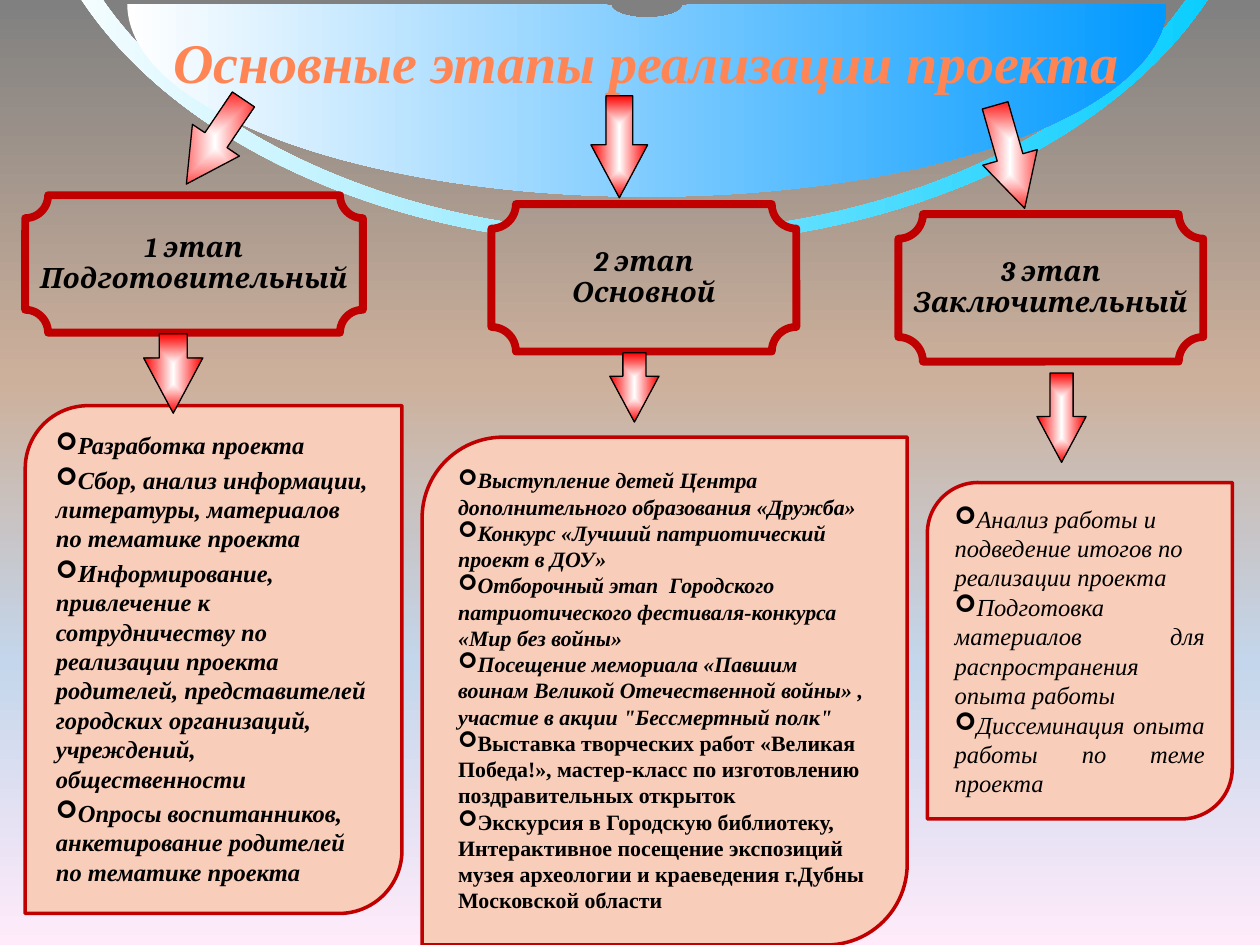
import pptx
import pptx.util
import pptx.oxml
import pptx.oxml.ns
import pptx.dml.color
import pptx.enum.shapes
import pptx.enum.text

Inches, Pt = pptx.util.Inches, pptx.util.Pt
KIND = pptx.enum.shapes.MSO_SHAPE
ALIGN = pptx.enum.text.PP_ALIGN
ANCHOR = pptx.enum.text.MSO_ANCHOR
HUE = {"title": "FF8654", "space": "0000CC", "text": "000000",
       "edge": "C00000", "card": "F8CDBA"}
SERIF = "Times New Roman"
WIDTH, HEIGHT = 10, 7.5
NS = pptx.oxml.ns.nsdecls("a")

# Content
TITLE = "Основные этапы реализации проекта"
BACK = [(0, "808080"), (40, "CDB09B"), (70, "C4D6EB"), (100, "FFEBFA")]
ARROW = [(0, "FFFFFF"), (100, "FF0000")]
# box, outer and inner half ellipse (cx, cy, rx, ry), end colour
RINGS = [
    ((0.23, -4.7, 9.77, 6.66), (5.115, -1.32, 4.885, 3.27),
     (5.115, -1.33, 4.735, 3.18), "00CCFF"),
    ((1.01, -1.48, 8.25, 3.05), (5.135, 0.03, 4.125, 1.53),
     (5.135, 0.04, 0.285, 0.1), "0099FF"),
]
STAGES = [
    ((0.2, 1.55, 2.68, 1.09), ["1 этап", "Подготовительный"]),
    ((7.13, 1.7, 2.42, 1.17), ["3 этап", "Заключительный"]),
    ((3.9, 1.62, 2.42, 1.17), ["2 этап", "Основной"]),
]
# place, size, bold, space before, items (text, italic, justified)
CARDS = [
    ((0.2, 3.22, 2.99, 4.03), 14, True, 2.8, [
        ("Разработка проекта", True, False),
        ("Сбор, анализ информации, литературы, материалов по тематике проекта",
         True, False),
        ("Информирование, привлечение к сотрудничеству по реализации проекта "
         "родителей, представителей городских организаций, учреждений, "
         "общественности", True, False),
        ("Опросы воспитанников, анкетирование родителей по тематике проекта",
         True, False),
    ]),
    ((7.36, 3.83, 2.42, 2.67), 14, False, 0, [
        ("Анализ работы и подведение итогов по реализации проекта", True, False),
        ("Подготовка материалов для распространения опыта работы", True, True),
        ("Диссеминация опыта работы по теме проекта", True, True),
    ]),
    ((3.35, 3.47, 3.85, 4.03), 12.5, True, 0, [
        ("Выступление детей Центра дополнительного образования «Дружба»",
         True, False),
        ("Конкурс «Лучший патриотический проект в ДОУ»", True, False),
        ("Отборочный этап  Городского патриотического фестиваля-конкурса "
         "«Мир без войны»", True, False),
        ("Посещение мемориала «Павшим воинам Великой Отечественной войны» , "
         "участие в акции \"Бессмертный полк\"", True, False),
        ("Выставка творческих работ «Великая Победа!», мастер-класс по "
         "изготовлению поздравительных открыток", False, False),
        ("Экскурсия в Городскую библиотеку, Интерактивное посещение экспозиций "
         "музея археологии и краеведения г.Дубны Московской области",
         False, False),
    ]),
]
ARROWS = [  # place, turn
    ((1.3, 0.9, 0.81, 0.45), 124),
    ((7.59, 1.02, 0.85, 0.45), 74),
    ((4.51, 0.94, 0.81, 0.45), 90),
    ((1.06, 2.73, 0.63, 0.47), 90),
    ((4.76, 2.88, 0.55, 0.39), 90),
    ((8.07, 3.12, 0.71, 0.39), 90),
]


def color(name):
    return pptx.dml.color.RGBColor.from_string(HUE[name])


def blend(fill, root, stops, angle=None):
    """Gradient along an angle, or out from the centre when there is none."""
    fill.gradient()
    old = root.xpath(".//a:gradFill")[0]
    marks = "".join(f'<a:gs pos="{pos * 1000}"><a:srgbClr val="{hue}"/></a:gs>'
                    for pos, hue in stops)
    if angle is None:
        way = ('<a:path path="rect"><a:fillToRect l="50000" t="50000" '
               'r="50000" b="50000"/></a:path>')
    else:
        way = f'<a:lin ang="{angle * 60000}" scaled="0"/>'
    new = pptx.oxml.parse_xml(f'<a:gradFill {NS} rotWithShape="1">'
                              f'<a:gsLst>{marks}</a:gsLst>{way}</a:gradFill>')
    old.getparent().replace(old, new)


def shade(y):
    """Background colour at a height on the slide."""
    pos = y / HEIGHT * 100
    for (low, one), (high, two) in zip(BACK, BACK[1:]):
        if pos <= high:
            part = (pos - low) / (high - low)
            pairs = [(int(one[i:i + 2], 16), int(two[i:i + 2], 16))
                     for i in (0, 2, 4)]
            return "".join(f"{round(a + (b - a) * part):02X}" for a, b in pairs)
    return BACK[-1][1]


def bow(cx, cy, rx, ry):
    """Bezier points of a lower half ellipse, right to left."""
    k = 0.55
    unit = [(1, 0), (1, k), (k, 1), (0, 1), (-k, 1), (-1, k), (-1, 0)]
    return [(cx + rx * x, cy + ry * y) for x, y in unit]


def ring(box, outer, inner):
    """Band between two half ellipses, drawn with curves."""
    left, top, wide, high = box
    pen = slide.shapes.build_freeform(Inches(left), Inches(top))
    pen.add_line_segments([(Inches(left + wide), Inches(top + high))])
    band = pen.convert_to_shape()
    path = band.element.xpath(".//a:path")[0]
    for node in list(path):
        path.remove(node)

    def step(tag, points=()):
        dots = "".join(f'<a:pt x="{Inches(x - left)}" y="{Inches(y - top)}"/>'
                       for x, y in points)
        path.append(pptx.oxml.parse_xml(f"<a:{tag} {NS}>{dots}</a:{tag}>"))

    for tag, dots in (("moveTo", bow(*outer)), ("lnTo", bow(*inner)[::-1])):
        step(tag, dots[:1])
        step("cubicBezTo", dots[1:4])
        step("cubicBezTo", dots[4:])
    step("close")
    return band


def add(kind, place, edge, width):
    shape = slide.shapes.add_shape(kind, *map(Inches, place))
    shape.shadow.inherit = False
    shape.line.color.rgb = color(edge)
    shape.line.width = Pt(width)
    return shape


def write(para, text, hue="text", align=ALIGN.LEFT, **form):
    para.alignment = align
    run = para.add_run()
    run.text = text
    run.font.color.rgb = color(hue)
    for key, value in form.items():
        setattr(run.font, key, value)


def lines(frame, count):
    return [frame.paragraphs[0]] + [frame.add_paragraph()
                                    for _ in range(count - 1)]


deck = pptx.Presentation()
deck.slide_width, deck.slide_height = Inches(WIDTH), Inches(HEIGHT)
slide = deck.slides.add_slide(deck.slide_layouts[5])
blend(slide.background.fill, slide.element, BACK, 90)

# Curved bands at the top
for box, outer, inner, hue in RINGS:
    band = ring(box, outer, inner)
    band.shadow.inherit = False
    band.line.fill.background()
    blend(band.fill, band.element, [(0, "FFFFFF"), (100, hue)], 0)

# Title, in front of the bands
title = slide.shapes.title
title.element.getparent().append(title.element)
for key, value in zip(("left", "top", "width", "height"),
                      (0.93, 0.17, 8.33, 0.64)):
    setattr(title, key, Inches(value))
title.text_frame.vertical_anchor = ANCHOR.TOP
for text, hue, size, slant in ((" ", "space", 20, False),
                               (TITLE, "title", 32, True)):
    write(title.text_frame.paragraphs[0], text, hue, ALIGN.CENTER,
          name=SERIF, size=Pt(size), bold=True, italic=slant)

# Stage plaques, tinted like the background behind them
for place, words in STAGES:
    plaque = add(KIND.PLAQUE, place, "edge", 4.5)
    top, end = place[1], place[1] + place[3]
    blend(plaque.fill, plaque.element, [(0, shade(top)), (100, shade(end))], 90)
    frame = plaque.text_frame
    frame.word_wrap = False
    frame.vertical_anchor = ANCHOR.MIDDLE
    for para, text in zip(lines(frame, len(words)), words):
        para.line_spacing = 0.93
        write(para, text, align=ALIGN.CENTER, name="Cambria", size=Pt(16),
              bold=True, italic=True)

# Cards with bulleted tasks
for place, size, bold, gap, items in CARDS:
    card = add(KIND.ROUND_2_DIAG_RECTANGLE, place, "edge", 2)
    card.fill.solid()
    card.fill.fore_color.rgb = color("card")
    frame = card.text_frame
    frame.word_wrap = True
    frame.vertical_anchor = ANCHOR.TOP
    for para, (text, slant, full) in zip(lines(frame, len(items)), items):
        para.space_before = Pt(gap)
        write(para, text, align=ALIGN.JUSTIFY if full else ALIGN.LEFT,
              name=SERIF, size=Pt(size), bold=bold, italic=slant)
    for form in card.element.xpath(".//a:pPr"):
        for mark in ('buFont {} typeface="Wingdings"', 'buChar {} char="➢"'):
            form.append(pptx.oxml.parse_xml(f"<a:{mark.format(NS)}/>"))

# Arrows
for place, turn in ARROWS:
    arrow = add(KIND.RIGHT_ARROW, place, "text", 0.75)
    arrow.rotation = turn
    arrow.adjustments[0], arrow.adjustments[1] = 0.47, 0.933
    blend(arrow.fill, arrow.element, ARROW)

deck.save("out.pptx")
